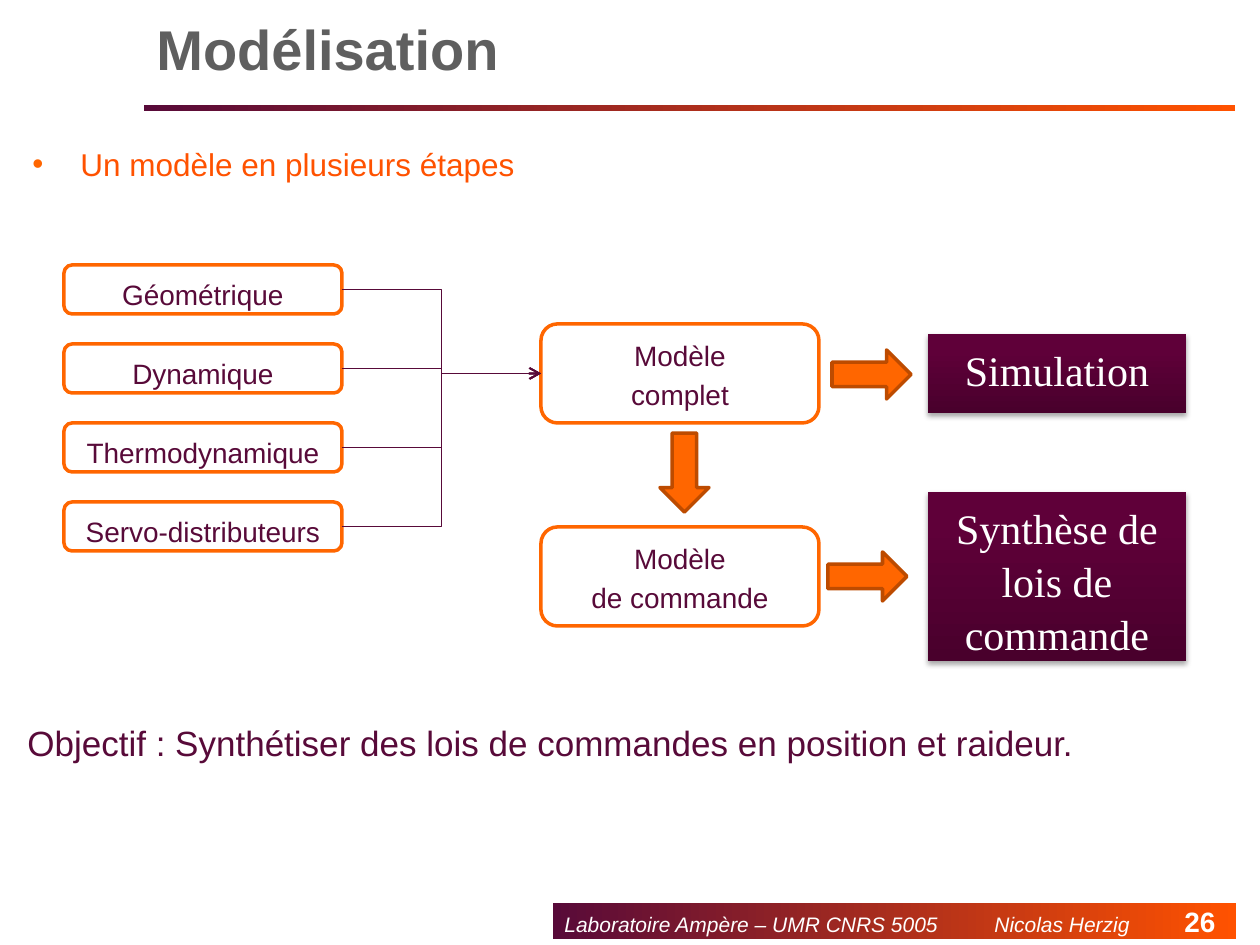
from lxml import etree
from pptx import Presentation
from pptx.dml.color import RGBColor
from pptx.enum.shapes import MSO_CONNECTOR, MSO_SHAPE
from pptx.enum.text import MSO_ANCHOR, PP_ALIGN
from pptx.oxml import parse_xml
from pptx.oxml.ns import nsdecls, qn
from pptx.util import Pt

PURPLE = RGBColor(0x58, 0x0A, 0x39)
ORANGE = RGBColor(0xFF, 0x52, 0x00)
BOX_ORANGE = RGBColor(0xFF, 0x66, 0x00)
ARROW_EDGE = RGBColor(0xBD, 0x4B, 0x00)
DARK = RGBColor(0x49, 0x00, 0x2C)
PLUM = RGBColor(0x5F, 0x00, 0x39)
GREY = RGBColor(0x5F, 0x5F, 0x5F)
WHITE = RGBColor(0xFF, 0xFF, 0xFF)

# Content; places are left, top, width, height in px
BANDS = [(553, 903, 683, 36), (144, 105, 1091, 6)]
STEPS = ["Géométrique", "Dynamique", "Thermodynamique", "Servo-distributeurs"]
MODELS = [(["Modèle", "complet"], (541, 324, 278, 99)),
          (["Modèle", "de commande"], (541, 527, 278, 99))]
RESULTS = [("Simulation", (928, 334, 258, 79)),
           ("Synthèse de lois de commande", (928, 492, 258, 169))]
ARROWS = [(660, 433, 0), (847, 335, 270), (843, 537, 270)]  # left, top, rotation
TEXTS = {
    "title": ("Modélisation", (144, 0, 1091, 96), 6,
              {"size": Pt(32), "bold": True, "color": GREY}),
    "bullet": ("Un modèle en plusieurs étapes", (20, 135, 1225, 69), 10,
               {"size": Pt(18), "color": ORANGE}),
    "goal": ("Objectif : Synthétiser des lois de commandes en position et raideur.",
             (15, 711, 1225, 169), 10, {"size": Pt(20), "color": PURPLE}),
    "footer": ("Laboratoire Ampère – UMR CNRS 5005\tNicolas Herzig",
               (552, 905, 609, 32), 6,
               {"size": Pt(12), "italic": True, "color": WHITE}),
    "number": ("26", (1172, 898, 59, 47), 6,
               {"size": Pt(16), "bold": True, "color": WHITE}),
}
STEP_PLACE, STEP_PITCH = (64, 265, 278, 49), 79
ARROW_SIZE = (49, 79)
BOX_FONT = {"size": Pt(16), "color": PURPLE}
RESULT_FONT = {"size": Pt(24), "name": "Times New Roman", "color": WHITE}


def px(value):
    return round(value * 914400 / 126)


def write(shape, lines, font, top=6, align=PP_ALIGN.LEFT):
    frame = shape.text_frame
    frame.word_wrap = True
    frame.vertical_anchor = MSO_ANCHOR.TOP
    frame.margin_top = px(top)
    for index, line in enumerate(lines):
        paragraph = frame.add_paragraph() if index else frame.paragraphs[0]
        paragraph.alignment = align
        if index:
            paragraph.space_before = Pt(3.2)
        run = paragraph.add_run()
        run.text = line
        for name, value in {"name": "Arial", **font}.items():
            if name == "color":
                run.font.color.rgb = value
            else:
                setattr(run.font, name, value)
    return frame


def add_shape(kind, place, fill, line=None):
    shape = slide.shapes.add_shape(kind, *map(px, place))
    shape.shadow.inherit = False
    shape.fill.solid()
    shape.fill.fore_color.rgb = fill
    if line is None:
        shape.line.fill.background()
    else:
        shape.line.color.rgb = line
        shape.line.width = Pt(2)
    return shape


def add_gradient(shape, first, last, angle, end=1.0):
    shape.fill.gradient()
    shape.fill.gradient_angle = angle
    for stop, color, position in zip(shape.fill.gradient_stops, (first, last), (0, end)):
        stop.color.rgb = color
        stop.position = position


def add_box(lines, place):
    box = add_shape(MSO_SHAPE.ROUNDED_RECTANGLE, place, WHITE, BOX_ORANGE)
    write(box, lines, BOX_FONT, 10, PP_ALIGN.CENTER)
    return box


presentation = Presentation()
presentation.slide_width, presentation.slide_height = px(1260), px(945)
slide = presentation.slides.add_slide(presentation.slide_layouts[6])

# Title rule and footer band
for place in BANDS:
    add_gradient(add_shape(MSO_SHAPE.RECTANGLE, place, PURPLE), PURPLE, ORANGE, 0)

# Model boxes
left, top, width, height = STEP_PLACE
steps = [add_box([name], (left, top + row * STEP_PITCH, width, height))
         for row, name in enumerate(STEPS)]
models = [add_box(lines, place) for lines, place in MODELS]

# Elbow connectors from every step to the complete model
for step in steps:
    connector = slide.shapes.add_connector(MSO_CONNECTOR.ELBOW, 0, 0, 0, 0)
    connector.begin_connect(step, 3)
    connector.end_connect(models[0], 1)
    connector.line.color.rgb = PURPLE
    connector.line.width = Pt(1)
    etree.SubElement(connector.line._get_or_add_ln(), qn("a:tailEnd"), type="arrow")
    etree.SubElement(connector._element.spPr, qn("a:effectLst"))

# Result boxes
for text, place in RESULTS:
    box = add_shape(MSO_SHAPE.RECTANGLE, place, PLUM)
    add_gradient(box, DARK, PLUM, 90, 0.8)
    box._element.spPr.find(qn("a:effectLst")).append(parse_xml(
        f'<a:outerShdw {nsdecls("a")} blurRad="39400" dist="22900" dir="5400000" '
        'rotWithShape="0"><a:srgbClr val="000000"><a:alpha val="35000"/>'
        '</a:srgbClr></a:outerShdw>'))
    frame = write(box, [text], RESULT_FONT, 8, PP_ALIGN.CENTER)
    frame.paragraphs[0].line_spacing = 1.05

# Block arrows
for left, top, rotation in ARROWS:
    arrow = add_shape(MSO_SHAPE.DOWN_ARROW, (left, top, *ARROW_SIZE), BOX_ORANGE, ARROW_EDGE)
    arrow.rotation = rotation

# Free text
frames = {}
for name, (text, place, margin, font) in TEXTS.items():
    frames[name] = write(slide.shapes.add_textbox(*map(px, place)), [text], font, margin)
frames["title"].vertical_anchor = MSO_ANCHOR.MIDDLE
frames["number"].word_wrap = False

# Bullet and footer tab stop
properties = frames["bullet"].paragraphs[0]._p.get_or_add_pPr()
properties.set("marL", str(px(48)))
properties.set("indent", str(px(-48)))
color = etree.SubElement(properties, qn("a:buClr"))
etree.SubElement(color, qn("a:srgbClr"), val=str(BOX_ORANGE))
etree.SubElement(properties, qn("a:buFont"), typeface="Arial")
etree.SubElement(properties, qn("a:buChar"), char="•")
tabs = etree.SubElement(frames["footer"].paragraphs[0]._p.get_or_add_pPr(), qn("a:tabLst"))
etree.SubElement(tabs, qn("a:tab"), pos=str(px(430)), algn="l")

presentation.save("out.pptx")
